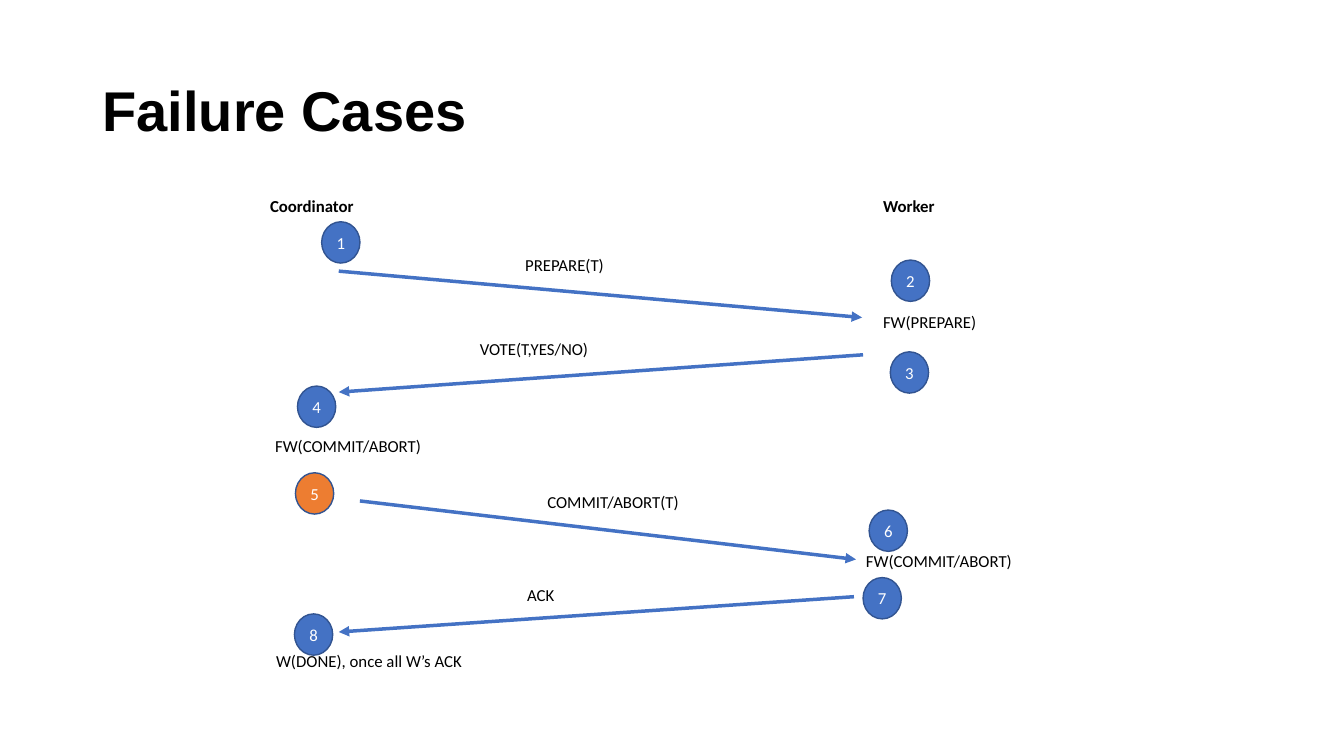
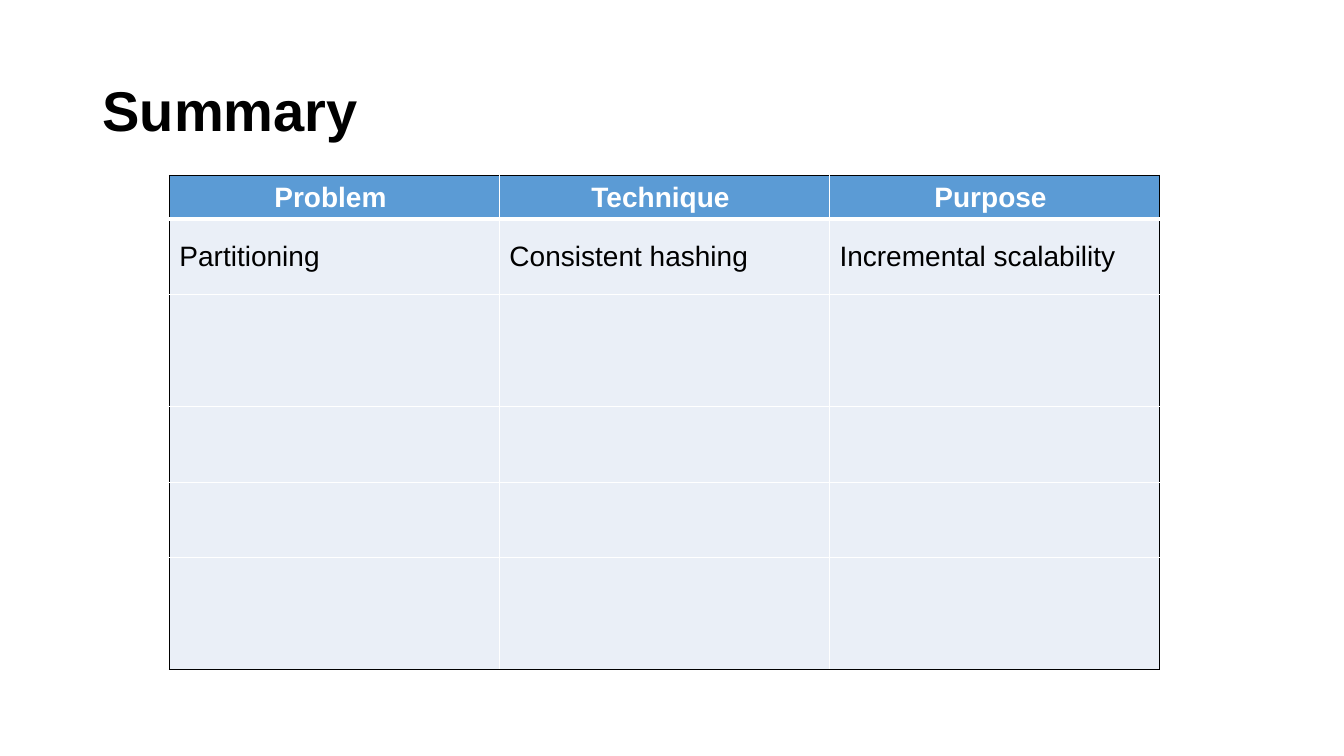
from lxml import etree
from pptx import Presentation
from pptx.dml.color import RGBColor
from pptx.enum.shapes import MSO_CONNECTOR, MSO_SHAPE
from pptx.enum.text import MSO_ANCHOR as Anchor, PP_ALIGN as Align
from pptx.oxml.ns import qn
from pptx.util import Inches, Pt

BLACK, WHITE = "000000", "FFFFFF"
BLUE, DARK_BLUE, ORANGE = "4472C4", "325491", "ED7D31"
HEADER_BLUE, PALE_BLUE = "5B9BD5", "EAEFF7"


def color(value):
    return RGBColor.from_string(value)


def write(frame, text, size, font, ink=BLACK, bold=False, align=Align.LEFT):
    para = frame.paragraphs[0]
    para.alignment = align
    span = para.add_run()
    span.text = text
    span.font.size = Pt(size)
    span.font.name = font
    span.font.bold = bold
    span.font.color.rgb = color(ink)
    return para


deck = Presentation()
deck.slide_width, deck.slide_height = Inches(13.33), Inches(7.5)

# Pages with their shared title style
pages = []
for title in ("Failure Cases", "Summary"):
    page = deck.slides.add_slide(deck.slide_layouts[6])
    box = page.shapes.add_textbox(Inches(0.92), Inches(0.4), Inches(11.5), Inches(1.45))
    box.text_frame.word_wrap = True
    box.text_frame.vertical_anchor = Anchor.MIDDLE
    write(box.text_frame, title, 40, "Arial", bold=True).line_spacing = 0.9
    pages.append(page)
failure_page, summary_page = pages

# Message arrows: start x, start y, end x, end y
for ends in (
    (3.36, 2.69, 8.55, 3.15),
    (8.56, 3.52, 3.36, 3.89),
    (3.57, 4.97, 8.49, 5.55),
    (8.47, 5.92, 3.36, 6.27),
):
    arrow = failure_page.shapes.add_connector(MSO_CONNECTOR.STRAIGHT, *map(Inches, ends))
    arrow.line.color.rgb = color(BLUE)
    arrow.line.width = Pt(2.5)
    etree.SubElement(arrow.line._get_or_add_ln(), qn("a:tailEnd"), type="triangle")
    etree.SubElement(arrow._element.spPr, qn("a:effectLst"))

# Roles, messages and log writes: text, left, top, width, bold
for text, left, top, width, bold in (
    ("Coordinator", 2.58, 1.89, 2.43, True),
    ("Worker", 8.66, 1.89, 1.21, True),
    ("PREPARE(T)", 5.11, 2.48, 2.38, False),
    ("FW(PREPARE)", 8.66, 3.04, 1.33, False),
    ("VOTE(T,YES/NO)", 4.66, 3.31, 2.38, False),
    ("FW(COMMIT/ABORT)", 2.63, 4.27, 2.38, False),
    ("COMMIT/ABORT(T)", 5.33, 4.83, 2.16, False),
    ("FW(COMMIT/ABORT)", 8.49, 5.41, 1.93, False),
    ("ACK", 5.13, 5.75, 2.16, False),
    ("W(DONE), once all W’s ACK", 2.64, 6.41, 2.9, False),
):
    box = failure_page.shapes.add_textbox(Inches(left), Inches(top), Inches(width), Inches(0.35))
    box.text_frame.word_wrap = True
    write(box.text_frame, text, 12, "Calibri", bold=bold)

# Numbered failure points, the fifth highlighted
points = (
    (3.19, 2.2), (8.84, 2.58), (8.83, 3.49), (2.95, 3.83),
    (2.93, 4.69), (8.62, 5.06), (8.56, 5.73), (2.92, 6.09),
)
for number, (left, top) in enumerate(points, start=1):
    circle = failure_page.shapes.add_shape(
        MSO_SHAPE.OVAL, Inches(left), Inches(top), Inches(0.38), Inches(0.41))
    circle.shadow.inherit = False
    circle.fill.solid()
    circle.fill.fore_color.rgb = color(ORANGE if number == 5 else BLUE)
    circle.line.color.rgb = color(DARK_BLUE)
    circle.line.width = Pt(1)
    frame = circle.text_frame
    frame.margin_left = frame.margin_right = frame.margin_top = frame.margin_bottom = 0
    frame.vertical_anchor = Anchor.MIDDLE
    write(frame, str(number), 12, "Calibri", WHITE, align=Align.CENTER)

# Summary table; each entry ends in a no-break space
rows = (
    ("Problem ", "Technique ", "Purpose "),
    ("Partitioning ", "Consistent hashing ", "Incremental scalability "),
)
heights = (0.39, 0.75, 1.11, 0.75, 0.75, 1.11)
last_row, last_column = len(heights) - 1, len(rows[0]) - 1
table = summary_page.shapes.add_table(
    len(heights), len(rows[0]), Inches(1.68), Inches(1.74), Inches(9.82), Inches(4.86)).table
table.first_row = table.horz_banding = False
for column in table.columns:
    column.width = Inches(9.82 / 3)

for r, height in enumerate(heights):
    table.rows[r].height = Inches(height)
    for c in range(last_column + 1):
        cell = table.cell(r, c)
        cell.vertical_anchor = Anchor.MIDDLE
        # Black outer frame, white inner lines, thicker under the header
        for side, outer, width in (
            ("L", c == 0, 1),
            ("R", c == last_column, 1),
            ("T", r == 0, 3 if r == 1 else 1),
            ("B", r == last_row, 3 if r == 0 else 1),
        ):
            border = etree.SubElement(
                cell._tc.get_or_add_tcPr(), qn(f"a:ln{side}"), w=str(Pt(width)))
            fill = etree.SubElement(border, qn("a:solidFill"))
            etree.SubElement(fill, qn("a:srgbClr"), val=BLACK if outer else WHITE)
        cell.fill.solid()
        cell.fill.fore_color.rgb = color(PALE_BLUE if r else HEADER_BLUE)
        if r < len(rows):
            header = r == 0
            write(cell.text_frame, rows[r][c], 20, "Arial", WHITE if header else BLACK,
                  header, Align.CENTER if header else Align.LEFT)

deck.save("out.pptx")
